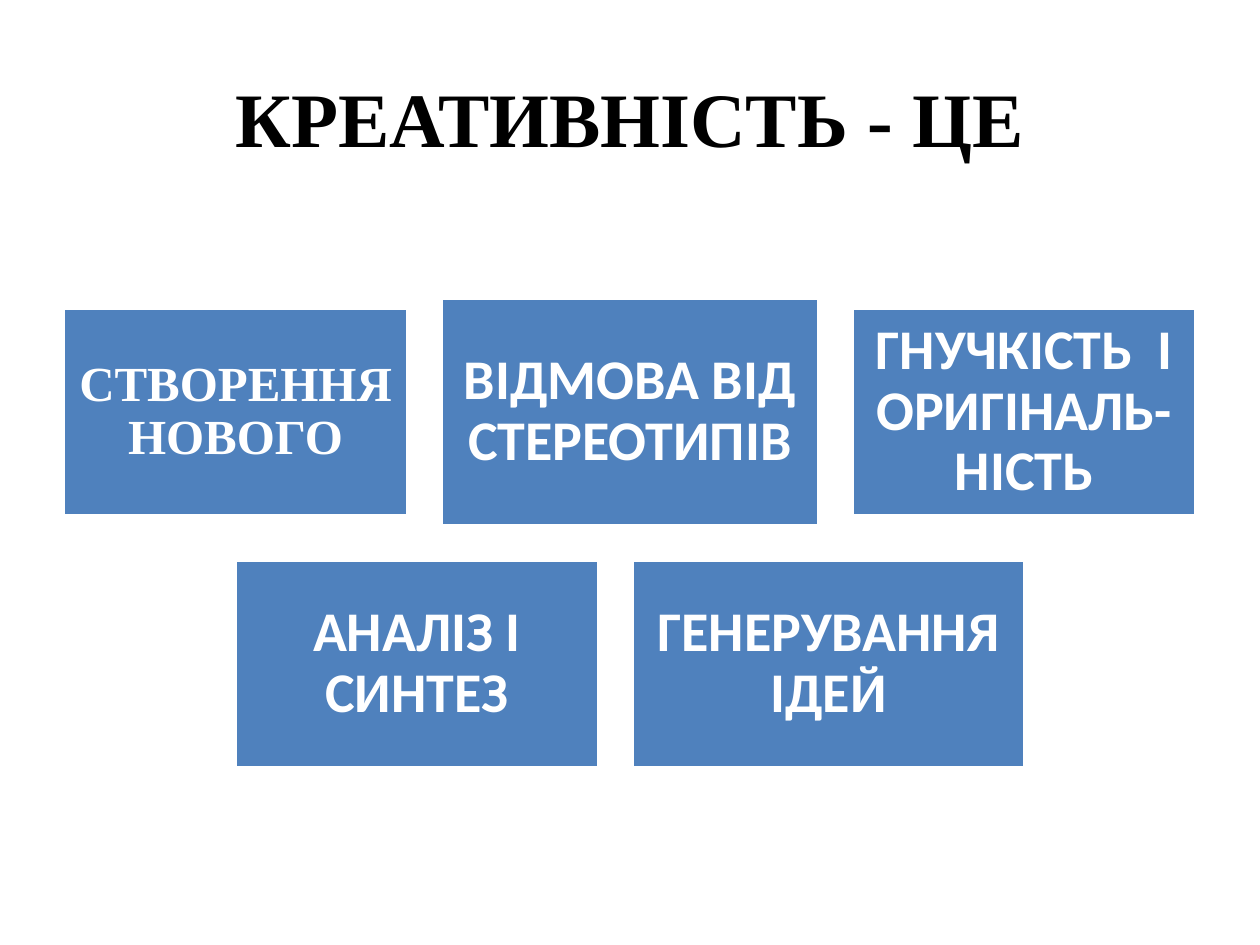
from pptx import Presentation
from pptx.dml.color import RGBColor
from pptx.enum.shapes import MSO_SHAPE
from pptx.enum.text import MSO_ANCHOR, PP_ALIGN
from pptx.util import Inches, Pt

RECT = MSO_SHAPE.RECTANGLE
MIDDLE = MSO_ANCHOR.MIDDLE
CENTER = PP_ALIGN.CENTER
SERIF = "Times New Roman"
WHITE = "FFFFFF"
BLUE = "4F81BD"
WIDTH = 10
GAP = 0.27

ROWS = [
    (3.27, [
        ("СТВОРЕННЯ НОВОГО", 2.73, 1.64, {"size": 28, "font": SERIF, "inset": 0.12}),
        ("ВІДМОВА ВІД СТЕРЕОТИПІВ", 2.99, 1.81, {}),
        ("ГНУЧКІСТЬ  І ОРИГІНАЛЬ-НІСТЬ", 2.73, 1.64, {}),
    ]),
    (5.27, [
        ("АНАЛІЗ І СИНТЕЗ", 2.88, 1.64, {}),
        ("ГЕНЕРУВАННЯ ІДЕЙ", 3.11, 1.64, {}),
    ]),
]


def color(code):
    return RGBColor.from_string(code)


def write(shape, text, size=32, font="Calibri", ink=WHITE, inset=0.13, space=0.9):
    frame = shape.text_frame
    frame.word_wrap = True
    frame.vertical_anchor = MIDDLE
    frame.margin_left = frame.margin_right = Inches(inset)
    frame.margin_top = frame.margin_bottom = Inches(inset)
    para = frame.paragraphs[0]
    para.alignment = CENTER
    para.line_spacing = space
    run = para.add_run()
    run.text = text
    run.font.size = Pt(size)
    run.font.name = font
    run.font.bold = True
    run.font.color.rgb = color(ink)


def head(slide, left, top, width, height):
    title = slide.shapes.title
    title.left, title.top = Inches(left), Inches(top)
    title.width, title.height = Inches(width), Inches(height)
    write(title, "КРЕАТИВНІСТЬ - ЦЕ", size=44, font=SERIF, ink="000000",
          inset=0.1, space=1.0)


def card(slide, left, top, width, height, text, style):
    box = slide.shapes.add_shape(
        RECT, Inches(left), Inches(top), Inches(width), Inches(height))
    box.shadow.inherit = False
    box.fill.solid()
    box.fill.fore_color.rgb = color(BLUE)
    box.line.color.rgb = color(WHITE)
    box.line.width = Pt(2)
    write(box, text, **style)


def row(slide, middle, cards):
    total = sum(width for _, width, _, _ in cards) + GAP * (len(cards) - 1)
    left = (WIDTH - total) / 2
    for text, width, height, style in cards:
        card(slide, left, middle - height / 2, width, height, text, style)
        left += width + GAP


def main():
    deck = Presentation()
    deck.slide_width, deck.slide_height = Inches(WIDTH), Inches(7.5)
    slide = deck.slides.add_slide(deck.slide_layouts[5])
    head(slide, 0.5, 0.3, 9, 1.25)
    for middle, cards in ROWS:
        row(slide, middle, cards)
    deck.save("out.pptx")


if __name__ == "__main__":
    main()
